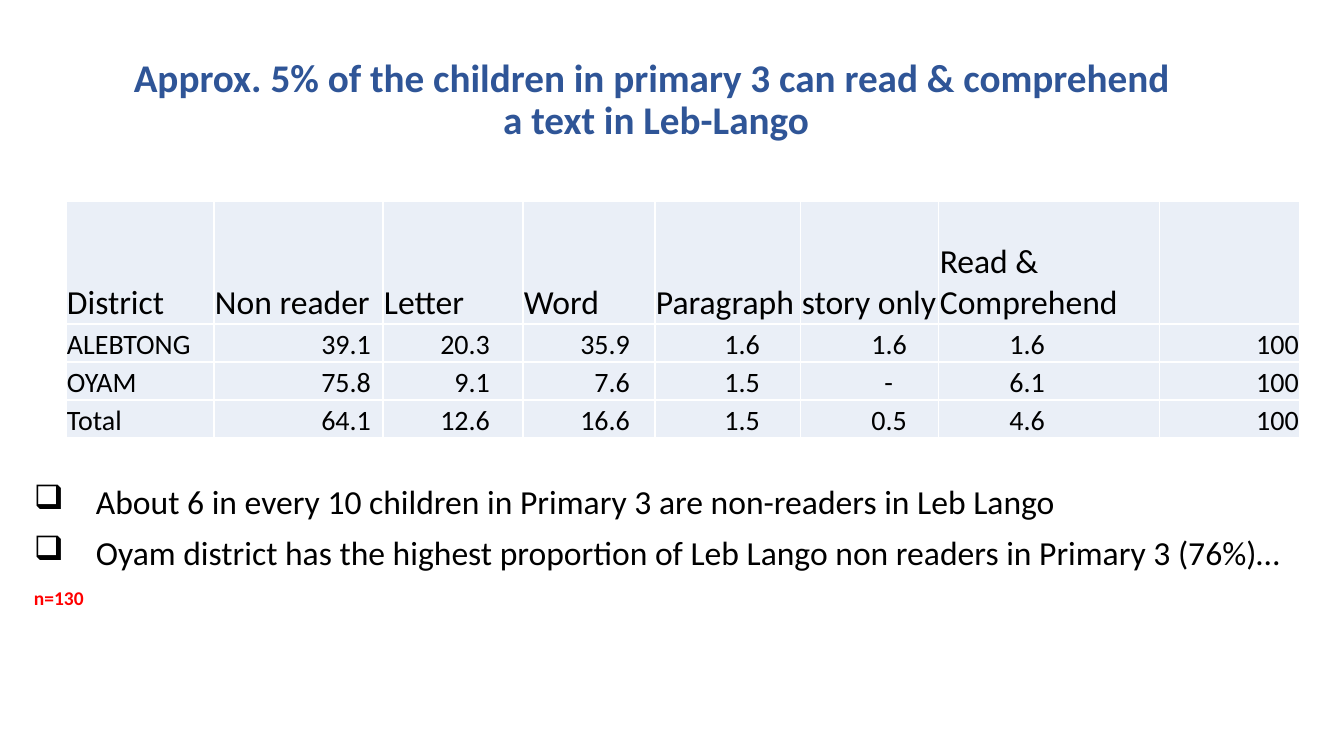
from pptx import Presentation
from pptx.dml.color import RGBColor
from pptx.enum.text import MSO_ANCHOR, MSO_AUTO_SIZE, PP_ALIGN
from pptx.oxml import parse_xml
from pptx.oxml.ns import nsdecls
from pptx.util import Pt

EMU_PER_PX = 914400 / 100.8
BLUE = RGBColor(0x2F, 0x55, 0x97)
BLACK = RGBColor(0x00, 0x00, 0x00)
RED = RGBColor(0xFF, 0x00, 0x00)
PALE = RGBColor(0xEA, 0xEF, 0xF7)
WHITE = RGBColor(0xFF, 0xFF, 0xFF)

TITLE = ["Approx. 5% of the children in primary 3 can read & comprehend ",
         "a text in Leb-Lango"]
ROWS = [
    ["District", "Non reader", "Letter", "Word", "Paragraph", "story only",
     "Read & Comprehend", ""],
    ["ALEBTONG", "39.1", "20.3", "35.9", "1.6", "1.6", "1.6", "100"],
    ["OYAM", "75.8", "9.1", "7.6", "1.5", "-", "6.1", "100"],
    ["Total", "64.1", "12.6", "16.6", "1.5", "0.5", "4.6", "100"],
]
COL_WIDTHS = [148, 169, 140, 132, 146, 138, 221, 140]
ROW_HEIGHTS = [123, 38, 38, 38]
NUMBER_INSETS = [1, 12, 33, 25, 41, 32, 115, 1]
DASH_SHIFT = 14
FINDINGS = [
    "About 6 in every 10 children in Primary 3 are non-readers in Leb Lango",
    "Oyam district has the highest proportion of Leb Lango non readers in Primary 3 (76%)…",
]


def px(n):
    return round(n * EMU_PER_PX)


class SlideBuilder:
    font = "Calibri"

    def __init__(self, prs):
        self.s = prs.slides.add_slide(prs.slide_layouts[5])

    def format(self, p, size, color=BLACK, bold=False):
        for r in p.runs:
            r.font.name = self.font
            r.font.size = Pt(size)
            r.font.bold = bold
            r.font.color.rgb = color

    def title(self, x, y, w, h, lines):
        sp = self.s.shapes.title
        sp.left, sp.top, sp.width, sp.height = map(px, (x, y, w, h))
        tf = sp.text_frame
        tf.text = "\n".join(lines)
        tf.word_wrap = True
        tf.auto_size = MSO_AUTO_SIZE.NONE
        tf.vertical_anchor = MSO_ANCHOR.BOTTOM
        for p in tf.paragraphs:
            p.alignment = PP_ALIGN.CENTER
            p.line_spacing = 0.9
            self.format(p, 28, BLUE, True)

    def cell(self, cell, text, size, align, right):
        cell.text = text
        cell.vertical_anchor = MSO_ANCHOR.BOTTOM
        cell.margin_left = cell.margin_top = px(1)
        cell.margin_right, cell.margin_bottom = px(right), 0
        p = cell.text_frame.paragraphs[0]
        p.alignment = align
        self.format(p, size)
        tcPr = cell._tc.get_or_add_tcPr()
        for side in "LRTB":
            tcPr.append(parse_xml(
                f'<a:ln{side} {nsdecls("a")} w="{Pt(1)}"><a:solidFill>'
                f'<a:srgbClr val="{WHITE}"/></a:solidFill></a:ln{side}>'))
        cell.fill.solid()
        cell.fill.fore_color.rgb = PALE

    def table(self, x, y, widths, heights, rows):
        tbl = self.s.shapes.add_table(
            len(rows), len(widths), px(x), px(y),
            px(sum(widths)), px(sum(heights))).table
        for col, w in zip(tbl.columns, widths):
            col.width = px(w)
        for row, h in zip(tbl.rows, heights):
            row.height = px(h)
        for i, row in enumerate(rows):
            for j, text in enumerate(row):
                number = i > 0 and j > 0
                right = NUMBER_INSETS[j] if number else 1
                if text == "-":
                    right += DASH_SHIFT
                self.cell(tbl.cell(i, j), text, 20 if i else 24,
                          PP_ALIGN.RIGHT if number else PP_ALIGN.LEFT, right)

    def bullet(self, p, indent):
        pPr = p._p.get_or_add_pPr()
        pPr.set("marL", str(px(indent)))
        pPr.set("indent", str(-px(indent)))
        pPr.append(parse_xml(f'<a:buChar {nsdecls("a")} char="❑"/>'))

    def findings(self, x, y, w, h, lines, note):
        tf = self.s.shapes.add_textbox(px(x), px(y), px(w), px(h)).text_frame
        tf.word_wrap = True
        tf.text = "\n".join(lines + [note])
        for p in tf.paragraphs:
            p.line_spacing = 0.9
            p.space_before = Pt(10)
        *items, last = tf.paragraphs
        for p in items:
            p.alignment = PP_ALIGN.JUSTIFY
            self.bullet(p, 62)
            self.format(p, 24)
        # Sample size as superscript
        self.format(last, 24, RED, True)
        last.runs[0]._r.get_or_add_rPr().set("baseline", "30000")


def main():
    prs = Presentation()
    prs.slide_width, prs.slide_height = px(1344), px(756)
    slide = SlideBuilder(prs)
    # Heading
    slide.title(32, 84, 1248, 64, TITLE)
    # Reading levels by district
    slide.table(66, 201, COL_WIDTHS, ROW_HEIGHTS, ROWS)
    # Findings and sample size
    slide.findings(24, 481, 1296, 217, FINDINGS, "n=130")
    prs.save("out.pptx")


if __name__ == "__main__":
    main()
